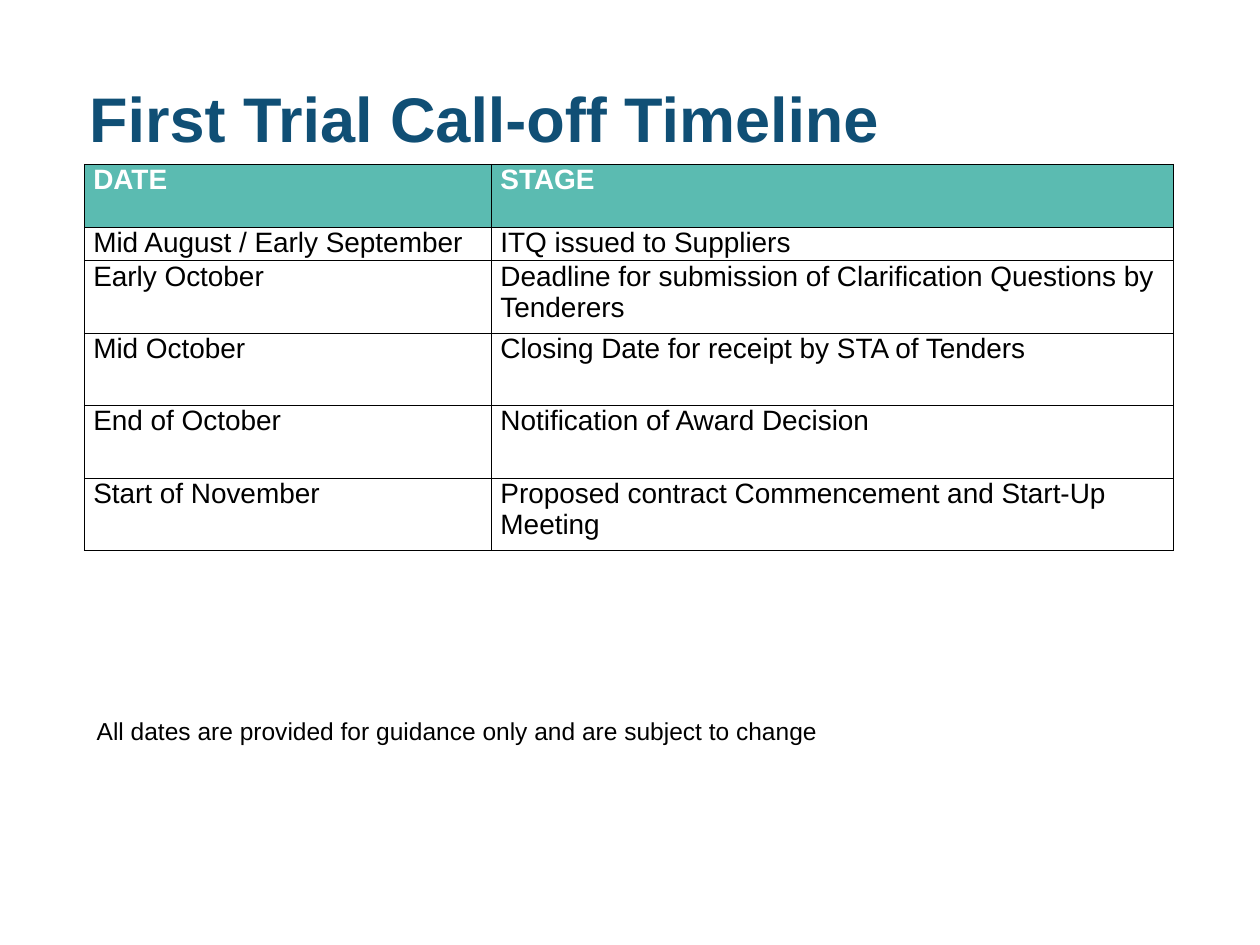
from dataclasses import dataclass

from lxml.etree import SubElement
from pptx import Presentation
from pptx.dml.color import RGBColor as Rgb
from pptx.enum.text import MSO_ANCHOR as Anchor, MSO_AUTO_SIZE as AutoSize
from pptx.oxml.ns import qn
from pptx.util import Cm, Pt


@dataclass(frozen=True)
class Theme:
    """Colours, font and type sizes of the slide."""
    font: str = "Arial"
    heading: str = "104F75"
    header_fill: str = "5BBBB1"
    paper: str = "FFFFFF"
    ink: str = "000000"
    title_size: int = 36
    table_size: int = 16
    note_size: int = 14
    border: float = 0.5


THEME = Theme()
STAGES = [
    ("DATE", "STAGE"),
    ("Mid August / Early September", "ITQ issued to Suppliers"),
    ("Early October", "Deadline for submission of Clarification Questions by Tenderers"),
    ("Mid October", "Closing Date for receipt by STA of Tenders"),
    ("End of October", "Notification of Award Decision"),
    ("Start of November", "Proposed contract Commencement and Start-Up Meeting"),
]
ROW_HEIGHTS = [1.27, 0.62] + [1.46] * 4
DATE_SHARE = 0.374


def write(frame, text, size, color, bold=False):
    """Put one formatted paragraph into a text frame."""
    frame.text = text
    font = frame.paragraphs[0].runs[0].font
    font.name, font.size, font.bold = THEME.font, Pt(size), bold
    font.color.rgb = Rgb.from_string(color)


def outline(cell):
    """Draw a thin line on all four sides of a cell."""
    properties = cell._tc.get_or_add_tcPr()
    for side in ("a:lnL", "a:lnR", "a:lnT", "a:lnB"):
        line = SubElement(properties, qn(side), w=str(Pt(THEME.border)))
        fill = SubElement(line, qn("a:solidFill"))
        SubElement(fill, qn("a:srgbClr"), val=THEME.ink)


def add_title(slide, left, top, width, height):
    """Place the heading at the bottom of its box."""
    frame = slide.shapes.add_textbox(Cm(left), Cm(top), Cm(width), Cm(height)).text_frame
    frame.margin_left = frame.margin_right = frame.margin_top = frame.margin_bottom = 0
    frame.word_wrap = True
    frame.vertical_anchor = Anchor.BOTTOM
    write(frame, "First Trial Call-off Timeline", THEME.title_size, THEME.heading, True)


def add_timeline(slide, left, top, width):
    """Place the table of dates and stages."""
    timeline = slide.shapes.add_table(
        len(STAGES), 2, Cm(left), Cm(top), Cm(width), Cm(sum(ROW_HEIGHTS))
    ).table
    timeline.horz_banding = False
    for column, share in zip(timeline.columns, (DATE_SHARE, 1 - DATE_SHARE)):
        column.width = Cm(width * share)
    for index, (row, stage, height) in enumerate(zip(timeline.rows, STAGES, ROW_HEIGHTS)):
        row.height = Cm(height)
        header = index == 0
        for cell, text in zip(row.cells, stage):
            cell.margin_left = cell.margin_right = Cm(0.18)
            cell.margin_top = cell.margin_bottom = 0
            outline(cell)
            cell.fill.solid()
            cell.fill.fore_color.rgb = Rgb.from_string(
                THEME.header_fill if header else THEME.paper
            )
            write(cell.text_frame, text, THEME.table_size,
                  THEME.paper if header else THEME.ink, header)


def add_note(slide, left, top, width, height):
    """Place the remark below the table."""
    frame = slide.shapes.add_textbox(Cm(left), Cm(top), Cm(width), Cm(height)).text_frame
    frame.word_wrap = False
    frame.auto_size = AutoSize.SHAPE_TO_FIT_TEXT
    write(frame, "All dates are provided for guidance only and are subject to change",
          THEME.note_size, THEME.ink)


def main():
    """Build and save the slide."""
    deck = Presentation()
    deck.slide_width, deck.slide_height = Cm(25.4), Cm(19.05)
    slide = deck.slides.add_slide(deck.slide_layouts[6])
    add_title(slide, 1.8, 1.52, 18.9, 1.6)
    add_timeline(slide, 1.7, 3.31, 21.95)
    add_note(slide, 1.7, 14.3, 15.09, 0.86)
    deck.save("out.pptx")


if __name__ == "__main__":
    main()
